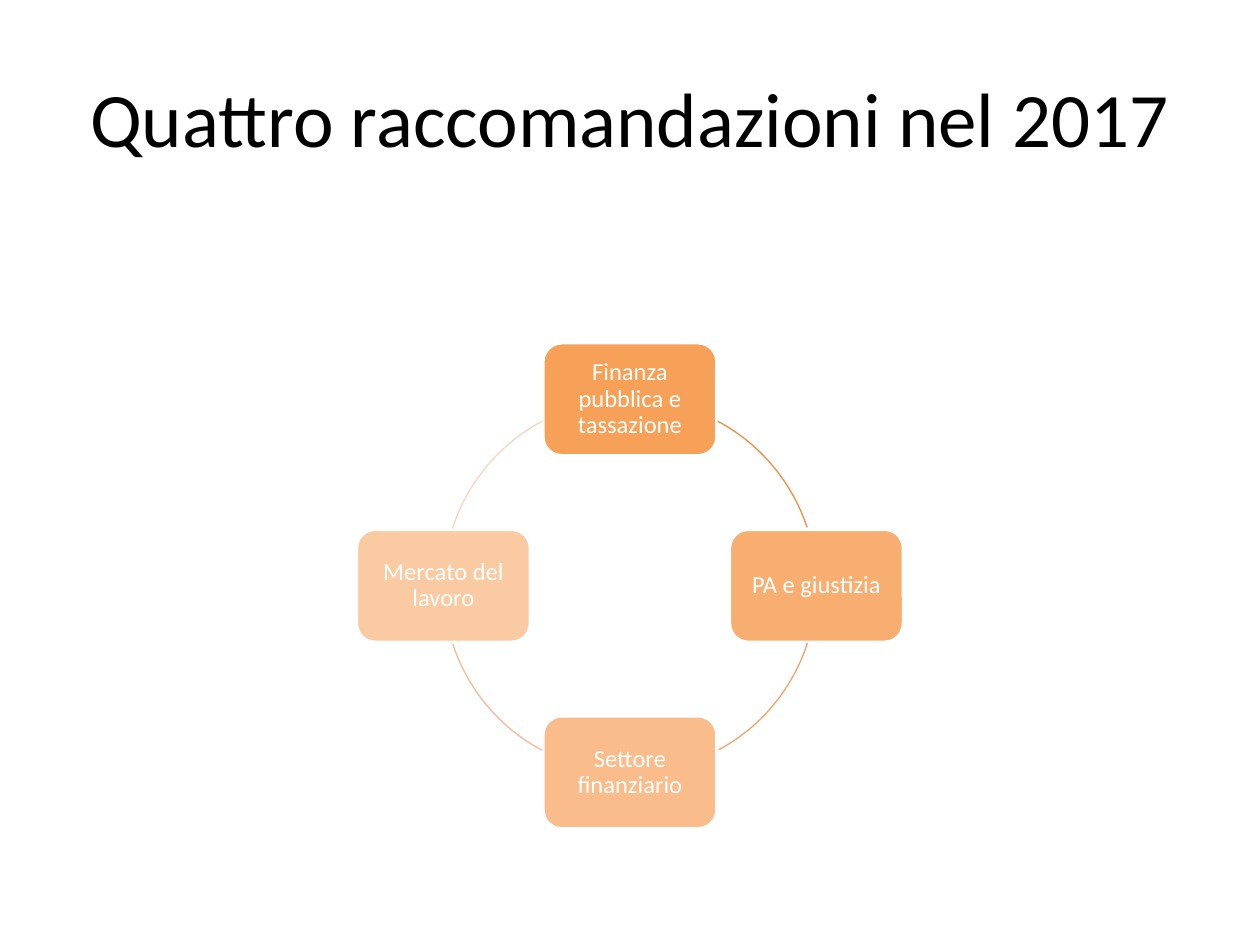
from dataclasses import dataclass
from math import cos, radians, sin

from lxml.etree import SubElement
from pptx import Presentation
from pptx.dml.color import RGBColor
from pptx.enum.shapes import MSO_SHAPE as Shape
from pptx.enum.text import MSO_ANCHOR as Anchor, PP_ALIGN as Align
from pptx.oxml.ns import qn
from pptx.slide import Slide
from pptx.text.text import TextFrame
from pptx.util import Cm, Pt

BLACK = RGBColor(0x00, 0x00, 0x00)
WHITE = RGBColor(0xFF, 0xFF, 0xFF)
ORANGE = RGBColor(0xF7, 0x96, 0x46)

CENTER_X, CENTER_Y, RADIUS = 12.7, 11.81, 3.76
BOX_W, BOX_H = 3.51, 2.28
ARC_SWEEP = 44
ARC_UNITS_PER_DEGREE = 0.6


@dataclass
class Recommendation:
    text: str
    opacity: int
    arc_start: float
    arc_color: RGBColor


RECOMMENDATIONS = [
    Recommendation("Finanza pubblica e tassazione", 90, 298.2, RGBColor(0xEC, 0x8F, 0x43)),
    Recommendation("PA e giustizia", 77, 17.9, RGBColor(0xF2, 0xA3, 0x6C)),
    Recommendation("Settore finanziario", 63, 118.2, RGBColor(0xF7, 0xB9, 0x96)),
    Recommendation("Mercato del lavoro", 50, 197.9, RGBColor(0xFB, 0xD4, 0xC1)),
]


def write_text(tf: TextFrame, text: str, size: int, color: RGBColor, **margins: Cm) -> None:
    frame_format = {"word_wrap": True, "vertical_anchor": Anchor.MIDDLE, **margins}
    for name, value in frame_format.items():
        setattr(tf, name, value)
    p = tf.paragraphs[0]
    p.alignment = Align.CENTER
    r = p.add_run()
    r.text = text
    for name, value in {"name": "Calibri", "size": Pt(size)}.items():
        setattr(r.font, name, value)
    r.font.color.rgb = color


def add_title(s: Slide, text: str) -> None:
    sp = s.shapes.title
    place = {"left": Cm(1.27), "top": Cm(0.76), "width": Cm(22.86), "height": Cm(3.18)}
    for name, value in place.items():
        setattr(sp, name, value)
    write_text(sp.text_frame, text, 44, BLACK)


def add_box(s: Slide, item: Recommendation, angle: float) -> None:
    x = CENTER_X + RADIUS * cos(radians(angle))
    y = CENTER_Y + RADIUS * sin(radians(angle))
    sp = s.shapes.add_shape(
        Shape.ROUNDED_RECTANGLE, Cm(x - BOX_W / 2), Cm(y - BOX_H / 2), Cm(BOX_W), Cm(BOX_H)
    )
    sp.shadow.inherit = False
    sp.fill.solid()
    sp.fill.fore_color.rgb = ORANGE
    fill_color = sp.fill._xPr.find(qn("a:solidFill"))[0]
    SubElement(fill_color, qn("a:alpha")).set("val", str(item.opacity * 1000))
    sp.line.color.rgb = WHITE
    sp.line.width = Pt(2)
    sides = ("left", "top", "right", "bottom")
    write_text(sp.text_frame, item.text, 14, WHITE, **{f"margin_{side}": Cm(0.05) for side in sides})
    sp.text_frame.paragraphs[0].line_spacing = 0.9


def add_arc(s: Slide, item: Recommendation) -> None:
    sp = s.shapes.add_shape(
        Shape.ARC, Cm(CENTER_X - RADIUS), Cm(CENTER_Y - RADIUS), Cm(2 * RADIUS), Cm(2 * RADIUS)
    )
    sp.shadow.inherit = False
    sp.adjustments[0] = item.arc_start * ARC_UNITS_PER_DEGREE
    sp.adjustments[1] = (item.arc_start + ARC_SWEEP) * ARC_UNITS_PER_DEGREE
    sp.fill.background()
    sp.line.color.rgb = item.arc_color
    sp.line.width = Pt(0.75)


def main() -> None:
    prs = Presentation()
    prs.slide_width, prs.slide_height = Cm(25.4), Cm(19.05)
    s = prs.slides.add_slide(prs.slide_layouts[5])
    add_title(s, "Quattro raccomandazioni nel 2017")
    for i, item in enumerate(RECOMMENDATIONS):
        add_box(s, item, -90 + i * 360 / len(RECOMMENDATIONS))
        add_arc(s, item)
    prs.save("out.pptx")


if __name__ == "__main__":
    main()
